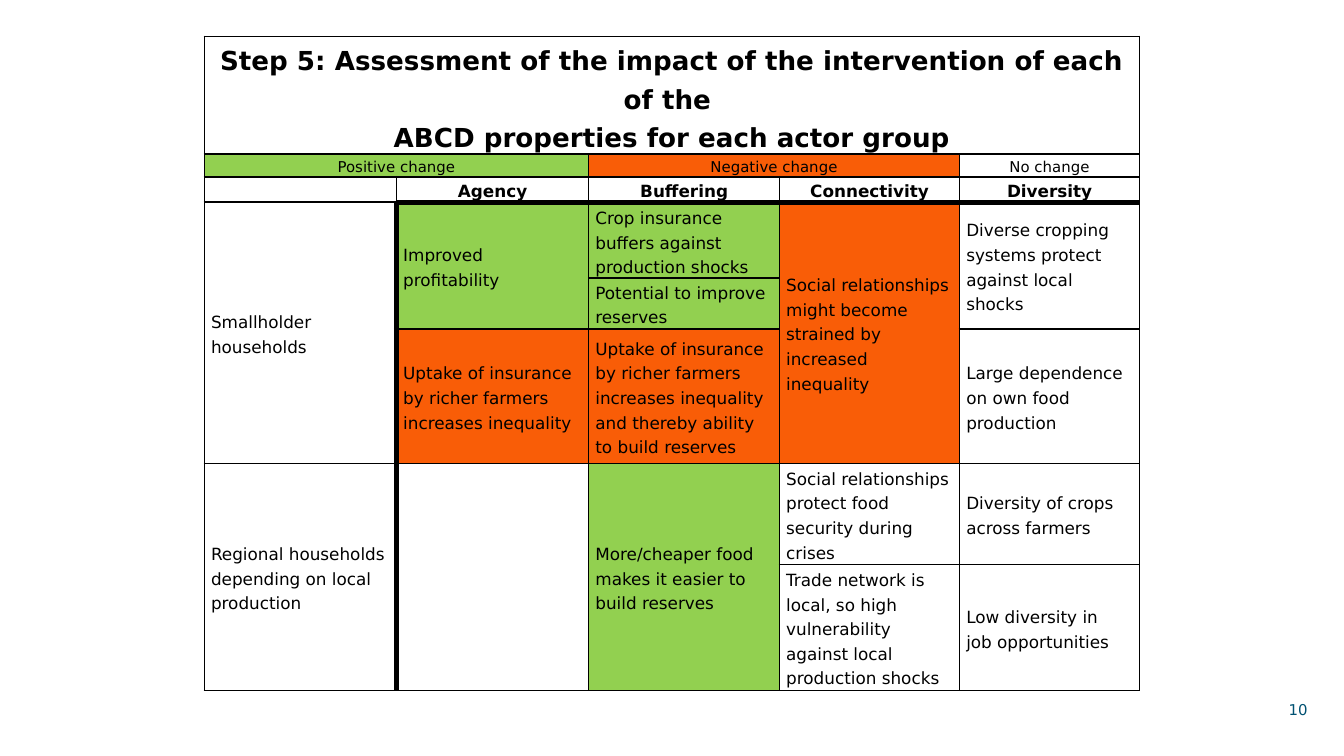
import pptx
import pptx.dml.color
import pptx.enum.text
import pptx.oxml
import pptx.oxml.ns
import pptx.util
from pptx.util import Inches

COLORS = {"black": "000000", "green": "92D050", "orange": "F95D07", "number": "005172"}
ALIGN = pptx.enum.text.PP_ALIGN
ANCHOR = pptx.enum.text.MSO_ANCHOR


def write_text(frame, text, size=9, bold=False, color="black", align=ALIGN.LEFT,
               spacing=1.25, after=8):
    paragraph = frame.paragraphs[0]
    paragraph.alignment = align
    paragraph.line_spacing = spacing
    paragraph.space_after = pptx.util.Pt(after)
    paragraph.text = text
    for run in paragraph.runs:
        run.font.name = "DejaVu Sans"
        run.font.size = pptx.util.Pt(size)
        run.font.bold = bold
        run.font.color.rgb = pptx.dml.color.RGBColor.from_string(COLORS[color])
    paragraph._p.get_or_add_endParaRPr().set("sz", str(size * 100))


def add_border(cell, side, points):
    properties = cell._tc.get_or_add_tcPr()
    properties.append(pptx.oxml.parse_xml(
        f'<a:ln{side} {pptx.oxml.ns.nsdecls("a")} w="{points * 12700}"><a:solidFill>'
        f'<a:srgbClr val="{COLORS["black"]}"/></a:solidFill></a:ln{side}>'))


presentation = pptx.Presentation()
presentation.slide_width = Inches(10)
presentation.slide_height = Inches(10 * 9 / 16)
slide = presentation.slides.add_slide(presentation.slide_layouts[6])

number_box = slide.shapes.add_textbox(Inches(9.26), Inches(5.22), Inches(0.51), Inches(0.13))
number_frame = number_box.text_frame
number_frame.word_wrap = True
number_frame.margin_left, number_frame.margin_right = Inches(0.1), Inches(0.04)
number_frame.margin_top = number_frame.margin_bottom = 0
write_text(number_frame, "10", size=8, color="number", align=ALIGN.RIGHT,
           spacing=pptx.util.Pt(9), after=0)

column_widths = [1.43, 1.43, 1.42, 1.34, 1.34]
row_heights = [0, 0.17, 0.17, 0.42, 0.38, 1, 0.71, 0.86]
table_frame = slide.shapes.add_table(
    len(row_heights), len(column_widths), Inches(1.52), Inches(0.27),
    Inches(6.95), Inches(4.75))
table = table_frame.table
table.first_row = False
table.horz_banding = False
for column, width in zip(table.columns, column_widths):
    column.width = Inches(width)
for row, height in zip(table.rows, row_heights):
    row.height = Inches(height)
table_frame.width, table_frame.height = Inches(6.95), Inches(4.75)

merges = [(0, 0, 0, 4), (1, 0, 1, 1), (1, 2, 1, 3), (3, 0, 5, 0), (3, 1, 4, 1),
          (3, 3, 5, 3), (3, 4, 4, 4), (6, 0, 7, 0), (6, 1, 7, 1), (6, 2, 7, 2)]
for top, left, bottom, right in merges:
    table.cell(top, left).merge(table.cell(bottom, right))

contents = {
    (0, 0): ("Step 5: Assessment of the impact of the intervention of each of the \v"
             "ABCD properties for each actor group", None),
    (1, 0): ("Positive change", "green"),
    (1, 2): ("Negative change", "orange"),
    (1, 4): ("No change", None),
    (2, 1): ("Agency", None),
    (2, 2): ("Buffering", None),
    (2, 3): ("Connectivity", None),
    (2, 4): ("Diversity", None),
    (3, 0): ("Smallholder households", None),
    (3, 1): ("Improved profitability", "green"),
    (3, 2): ("Crop insurance buffers against production shocks", "green"),
    (3, 3): ("Social relationships might become strained by increased inequality", "orange"),
    (3, 4): ("Diverse cropping \vsystems protect \vagainst local shocks", None),
    (4, 2): ("Potential to improve reserves", "green"),
    (5, 1): ("Uptake of insurance \vby richer farmers \vincreases inequality", "orange"),
    (5, 2): ("Uptake of insurance by richer farmers increases inequality "
             "and thereby ability to build reserves", "orange"),
    (5, 4): ("Large dependence on own food production", None),
    (6, 0): ("Regional households depending on local production", None),
    (6, 2): ("More/cheaper food makes it easier to build reserves", "green"),
    (6, 3): ("Social relationships protect food security during crises", None),
    (6, 4): ("Diversity of crops \vacross farmers", None),
    (7, 3): ("Trade network is local, so high vulnerability against local "
             "production shocks", None),
    (7, 4): ("Low diversity in \vjob opportunities", None),
}
header_formats = {0: {"size": 14, "bold": True}, 1: {"size": 8}, 2: {"bold": True}}

for row in range(len(row_heights)):
    for column in range(len(column_widths)):
        cell = table.cell(row, column)
        text, fill = contents.get((row, column), ("", None))
        cell.margin_left = cell.margin_right = Inches(0.05)
        cell.margin_top = cell.margin_bottom = 0
        cell.vertical_anchor = ANCHOR.BOTTOM if (row, column) in [(0, 0), (3, 2)] else ANCHOR.MIDDLE
        write_text(cell.text_frame, text, align=ALIGN.CENTER if row < 3 else ALIGN.LEFT,
                   **header_formats.get(row, {}))
        thick_sides = {"L": row > 2 and column == 1, "R": row > 2 and column == 0,
                       "T": row == 3 and column > 0, "B": row == 2 and column > 0}
        for side, thick in thick_sides.items():
            add_border(cell, side, 3 if thick else 1)
        if fill:
            cell.fill.solid()
            cell.fill.fore_color.rgb = pptx.dml.color.RGBColor.from_string(COLORS[fill])
        else:
            cell.fill.background()

presentation.save("out.pptx")
